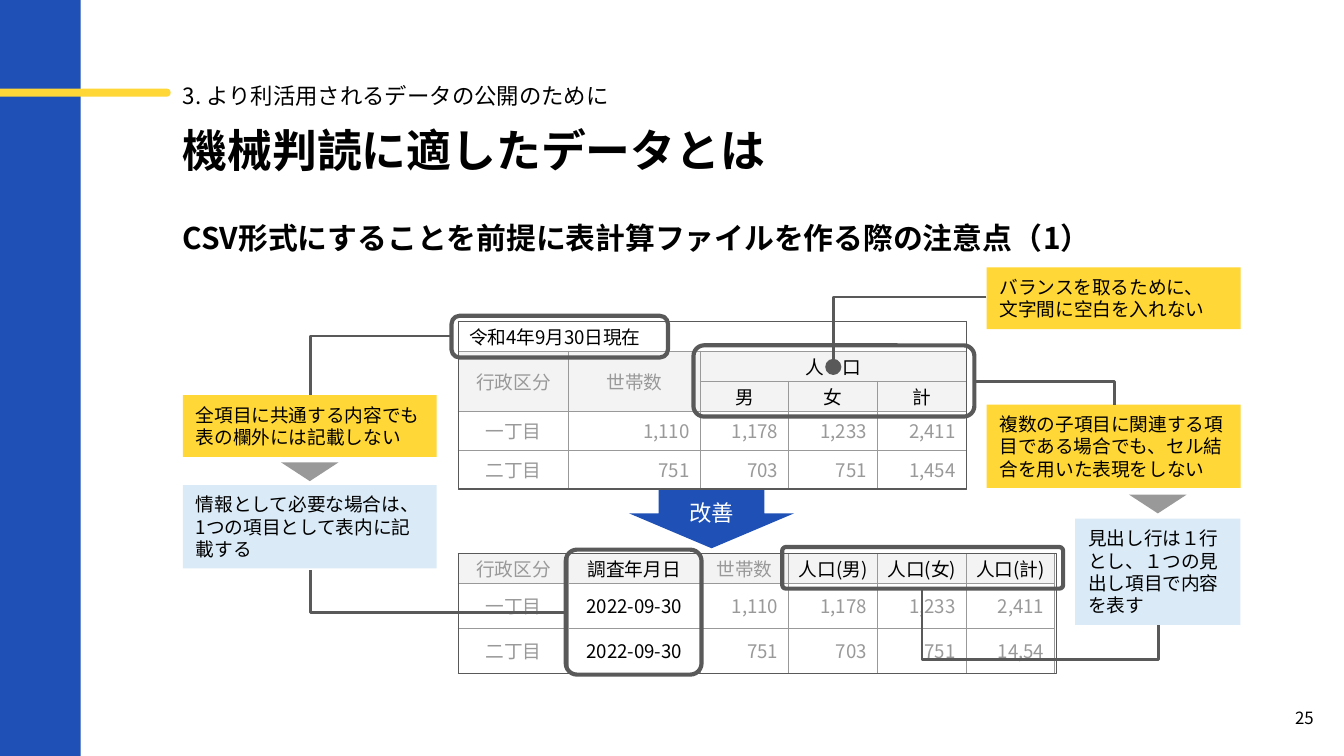
from lxml import etree
from pptx import Presentation
from pptx.dml.color import RGBColor
from pptx.enum import shapes, text
from pptx.oxml import ns
from pptx.util import Inches, Pt

FONT = "Noto Sans CJK JP"
COLORS = {
    "blue": "1E50B5", "yellow": "FFD737", "pale": "DAEAF6", "white": "FFFFFF",
    "header": "F3F3F3", "gray": "999999", "dark": "595959", "black": "000000",
}
WIDTH, HEIGHT = 10, 10 * 9 / 16
SHAPE, ALIGN, ANCHOR = shapes.MSO_SHAPE, text.PP_ALIGN, text.MSO_ANCHOR


def rgb(name):
    return RGBColor.from_string(COLORS[name])


def inches(*values):
    return [Inches(v) for v in values]


def write(tf, words, size=10, color="black", bold=False, align=ALIGN.LEFT,
          anchor=ANCHOR.TOP, margins=(0, 0, 0, 0), spacing=None):
    """Fill a text frame with one paragraph; margins run left, top, right, bottom."""
    tf.word_wrap = True
    tf.auto_size = text.MSO_AUTO_SIZE.NONE
    tf.vertical_anchor = anchor
    tf.margin_left, tf.margin_top, tf.margin_right, tf.margin_bottom = inches(*margins)
    style(tf.paragraphs[0], words, size, color, bold, align)
    if spacing:
        tf.paragraphs[0].line_spacing = spacing


def style(p, words, size, color, bold, align):
    p.text = words
    p.alignment = align
    p.font.name, p.font.size, p.font.bold = FONT, Pt(size), bold
    p.font.color.rgb = rgb(color)
    etree.SubElement(p.font._rPr, ns.qn("a:ea"), typeface=FONT)


def textbox(s, box, words, **kw):
    write(s.shapes.add_textbox(*inches(*box)).text_frame, words, **kw)


def shape(s, kind, box, fill=None, line=None, width=0.75, adj=()):
    sp = s.shapes.add_shape(kind, *inches(*box))
    sp.shadow.inherit = False
    for i, value in enumerate(adj):
        sp.adjustments[i] = value
    if fill:
        sp.fill.solid()
        sp.fill.fore_color.rgb = rgb(fill)
    else:
        sp.fill.background()
    if line:
        sp.line.color.rgb = rgb(line)
        sp.line.width = Pt(width)
    else:
        sp.line.fill.background()
    return sp


def highlight(s, box, radius):
    shape(s, SHAPE.ROUNDED_RECTANGLE, box, line="dark", width=2.25, adj=[radius])


def callout(s, box, words, fill):
    sp = shape(s, SHAPE.RECTANGLE, box, fill)
    write(sp.text_frame, words, anchor=ANCHOR.MIDDLE, margins=(0.1, 0.06, 0.1, 0.06))


def pointer(s, x, y):
    sp = shape(s, SHAPE.ISOSCELES_TRIANGLE, (x, y, 0.43, 0.14), "gray")
    sp.rotation = 180


def elbow(s, x1, y1, x2, y2):
    c = s.shapes.add_connector(shapes.MSO_CONNECTOR.ELBOW, *inches(x1, y1, x2, y2))
    c.line.color.rgb = rgb("dark")
    c.line.width = Pt(1.5)
    etree.SubElement(c._element.spPr, ns.qn("a:effectLst"))
    return c


def corner(s, x1, y1, x2, y2):
    """Line that runs level from the first point, then turns once."""
    c = elbow(s, x1, y1, x2, y2)
    c._element.spPr.find(ns.qn("a:prstGeom")).set("prst", "bentConnector2")


def u_turn(s, x1, y1, x2, y2, reach):
    """Line that leaves downward, runs level and comes back up."""
    cx, cy, dx, dy = (x1 + x2) / 2, (y1 + y2) / 2, (y2 - y1) / 2, (x2 - x1) / 2
    c = elbow(s, cx - dx, cy - dy, cx + dx, cy + dy)
    xfrm = c._element.spPr.find(ns.qn("a:xfrm"))
    xfrm.set("rot", str(270 * 60000))
    xfrm.set("flipH", "1")
    geom = c._element.spPr.find(ns.qn("a:prstGeom"))
    guides = geom.find(ns.qn("a:avLst"))
    if guides is None:
        guides = etree.SubElement(geom, ns.qn("a:avLst"))
    etree.SubElement(guides, ns.qn("a:gd"), name="adj1", fmla=f"val {round(reach * 100000)}")


def border(cell):
    tc_pr = cell._tc.get_or_add_tcPr()
    for i, side in enumerate(("lnL", "lnR", "lnT", "lnB")):
        ln = etree.Element(ns.qn(f"a:{side}"), w=str(Pt(0.75)))
        fill = etree.SubElement(ln, ns.qn("a:solidFill"))
        etree.SubElement(fill, ns.qn("a:srgbClr"), val=COLORS["gray"])
        tc_pr.insert(i, ln)


def data_table(s, box, rows, widths, heights, header_rows, is_dark, spans=()):
    """Framed table; spans hold the first and last cell of each merged block."""
    t = s.shapes.add_table(len(rows), len(widths), *inches(*box)).table
    t.first_row = t.horz_banding = False
    for col, w in zip(t.columns, widths):
        col.width = Inches(w)
    for row, h in zip(t.rows, heights):
        row.height = Inches(h)
    for first, last in spans:
        t.cell(*first).merge(t.cell(*last))
    for r, row in enumerate(rows):
        for c, words in enumerate(row):
            cell = t.cell(r, c)
            number = words.replace(",", "").isdigit()
            title = len(spans) > 0 and r == 0
            align = ALIGN.RIGHT if number else ALIGN.LEFT if title else ALIGN.CENTER
            cell.vertical_anchor = ANCHOR.MIDDLE
            cell.margin_top = cell.margin_bottom = 0
            cell.margin_left = Inches(0.08 if title else 0)
            cell.margin_right = Inches(0.08 if number else 0)
            style(cell.text_frame.paragraphs[0], words, 10,
                  "black" if is_dark(r, c) else "gray", False, align)
            cell.fill.solid()
            cell.fill.fore_color.rgb = rgb("header" if r in header_rows else "white")
            border(cell)
    shape(s, SHAPE.RECTANGLE, box, line="dark")


def headings(s, x, y, w):
    textbox(s, (x, y, w, 0.27), "3. より利活用されるデータの公開のために", size=12,
            anchor=ANCHOR.MIDDLE, spacing=1.25)
    title = s.shapes.title
    title.left, title.top, title.width, title.height = inches(x, y + 0.36, w, 0.4)
    write(title.text_frame, "機械判読に適したデータとは", size=24, bold=True)
    textbox(s, (x, y + 1.02, w, 0.34),
            "CSV形式にすることを前提に表計算ファイルを作る際の注意点（1）",
            size=16, bold=True, spacing=1.25)


def before_table(s, x, y):
    rows = [
        ["令和4年9月30日現在", "", "", "", ""],
        ["行政区分", "世帯数", "人　口", "", ""],
        ["", "", "男", "女", "計"],
        ["一丁目", "1,110", "1,178", "1,233", "2,411"],
        ["二丁目", "751", "703", "751", "1,454"],
    ]
    h = 1.25
    data_table(s, (x, y, 3.78, h), rows, [0.82, 0.98] + [0.66] * 3,
               [(h - 2 * 0.29) / 3] * 3 + [0.29] * 2, (1, 2),
               lambda r, c: r == 0 or (r < 3 and c > 1),
               [((0, 0), (0, 4)), ((1, 0), (2, 0)), ((1, 1), (2, 1)), ((1, 2), (1, 4))])
    highlight(s, (x - 0.05, y - 0.04, 1.61, 0.31), 0.19)
    highlight(s, (x + 1.75, y + 0.18, 2.09, 0.53), 0.15)
    shape(s, SHAPE.OVAL, (x + 2.73, y + 0.28, 0.12, 0.12), "dark")


def after_table(s, x, y):
    rows = [
        ["行政区分", "調査年月日", "世帯数", "人口(男)", "人口(女)", "人口(計)"],
        ["一丁目", "2022-09-30", "1,110", "1,178", "1,233", "2,411"],
        ["二丁目", "2022-09-30", "751", "703", "751", "14,54"],
    ]
    h = 0.89
    data_table(s, (x, y, 4.45, h), rows, [0.82, 0.98] + [0.66] * 4,
               [0.22] + [(h - 0.22) / 2] * 2, (0,),
               lambda r, c: c == 1 or (r == 0 and c > 2))
    highlight(s, (x + 0.8, y - 0.03, 1.01, 0.93), 0.09)
    highlight(s, (x + 2.41, y - 0.05, 2.09, 0.31), 0.09)


def left_notes(s, x, y, w):
    callout(s, (x, y, w, 0.46), "全項目に共通する内容でも表の欄外には記載しない", "yellow")
    pointer(s, x + 0.73, y + 0.5)
    callout(s, (x, y + 0.67, w, 0.62),
            "情報として必要な場合は、1つの項目として表内に記載する", "pale")


def right_notes(s, x, y, w):
    callout(s, (x, y, w, 0.46), "バランスを取るために、\n文字間に空白を入れない", "yellow")
    callout(s, (x, y + 1.02, w, 0.62),
            "複数の子項目に関連する項目である場合でも、セル結合を用いた表現をしない", "yellow")
    pointer(s, x + 1.06, y + 1.69)
    callout(s, (x + 0.66, y + 1.87, w - 0.66, 0.79),
            "見出し行は１行とし、１つの見出し項目で内容を表す", "pale")


def main():
    prs = Presentation()
    prs.slide_width, prs.slide_height = inches(WIDTH, HEIGHT)
    s = prs.slides.add_slide(prs.slide_layouts[5])
    shape(s, SHAPE.RECTANGLE, (0, 0, 0.6, HEIGHT), "blue")
    shape(s, SHAPE.ROUNDED_RECTANGLE, (-0.11, 0.66, 1.38, 0.06), "yellow", adj=[0.5])
    headings(s, 1.36, 0.55, 7.87)
    arrow = shape(s, SHAPE.DOWN_ARROW, (4.68, 3.58, 1.23, 0.5), "blue", adj=[0.64, 0.52])
    write(arrow.text_frame, "改善", size=12, color="white", align=ALIGN.CENTER,
          anchor=ANCHOR.BOTTOM, margins=(0.1, 0.14, 0.1, 0))
    before_table(s, 3.41, 2.39)
    after_table(s, 3.41, 4.12)
    left_notes(s, 1.36, 2.94, 1.89)
    right_notes(s, 7.34, 1.99, 1.89)
    for ends in [(3.36, 2.5, 2.31, 2.94), (7.34, 2.21, 6.2, 2.67),
                 (7.24, 2.84, 8.29, 3.01), (4.21, 4.56, 2.31, 4.24)]:
        corner(s, *ends)
    u_turn(s, 6.86, 4.38, 8.62, 4.65, reach=1.95)
    textbox(s, (9.49, 5.13, 0.43, 0.43), "25", size=9, align=ALIGN.CENTER,
            anchor=ANCHOR.MIDDLE)
    prs.save("out.pptx")


if __name__ == "__main__":
    main()
